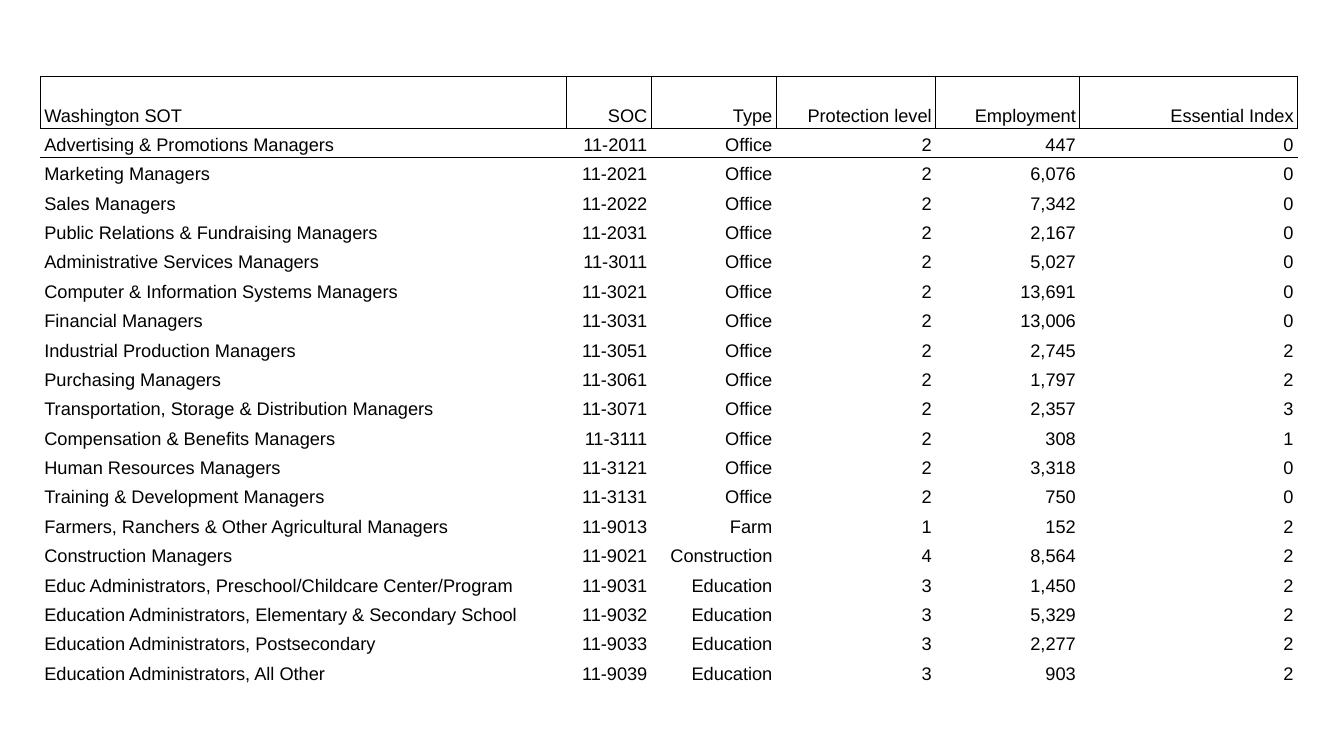
from lxml.etree import SubElement
from pptx import Presentation
from pptx.dml.color import RGBColor
from pptx.enum.text import MSO_ANCHOR, PP_ALIGN
from pptx.oxml.ns import qn
from pptx.util import Inches, Pt

BLACK = RGBColor(0x00, 0x00, 0x00)
FONT = "Arial"
NO_STYLE = "{2D5ABB26-0587-4C30-8999-92F81FD0307C}"

# Table grid, in inches
LEFT, TOP, BODY_HEIGHT = 0.4, 0.76, 5.54
HEADER_HEIGHT = 0.51
COLUMN_WIDTHS = [5.22, 0.84, 1.24, 1.58, 1.43, 2.16]

HEADER = ("Washington SOT", "SOC", "Type", "Protection level", "Employment",
          "Essential Index")
OCCUPATIONS = [
    ("Advertising & Promotions Managers", "11-2011", "Office", "2", "447", "0"),
    ("Marketing Managers", "11-2021", "Office", "2", "6,076", "0"),
    ("Sales Managers", "11-2022", "Office", "2", "7,342", "0"),
    ("Public Relations & Fundraising Managers", "11-2031", "Office", "2", "2,167", "0"),
    ("Administrative Services Managers", "11-3011", "Office", "2", "5,027", "0"),
    ("Computer & Information Systems Managers", "11-3021", "Office", "2", "13,691", "0"),
    ("Financial Managers", "11-3031", "Office", "2", "13,006", "0"),
    ("Industrial Production Managers", "11-3051", "Office", "2", "2,745", "2"),
    ("Purchasing Managers", "11-3061", "Office", "2", "1,797", "2"),
    ("Transportation, Storage & Distribution Managers", "11-3071", "Office", "2", "2,357", "3"),
    ("Compensation & Benefits Managers", "11-3111", "Office", "2", "308", "1"),
    ("Human Resources Managers", "11-3121", "Office", "2", "3,318", "0"),
    ("Training & Development Managers", "11-3131", "Office", "2", "750", "0"),
    ("Farmers, Ranchers & Other Agricultural Managers", "11-9013", "Farm", "1", "152", "2"),
    ("Construction Managers", "11-9021", "Construction", "4", "8,564", "2"),
    ("Educ Administrators, Preschool/Childcare Center/Program", "11-9031", "Education", "3",
     "1,450", "2"),
    ("Education Administrators, Elementary & Secondary School", "11-9032", "Education", "3",
     "5,329", "2"),
    ("Education Administrators, Postsecondary", "11-9033", "Education", "3", "2,277", "2"),
    ("Education Administrators, All Other", "11-9039", "Education", "3", "903", "2"),
]


def set_borders(cell, ruled_sides):
    """Rule the given sides (a string of L, R, T, B) and clear the others."""
    properties = cell._tc.get_or_add_tcPr()
    for side in "LRTB":
        line = SubElement(properties, qn(f"a:ln{side}"), w=str(Pt(0.75)))
        if side in ruled_sides:
            fill = SubElement(line, qn("a:solidFill"))
            SubElement(fill, qn("a:srgbClr"), val=str(BLACK))
        else:
            SubElement(line, qn("a:noFill"))


def ruled_sides_of(row):
    """Box the header, rule the first body row above and below."""
    return {0: "LRTB", 1: "TB", 2: "T"}.get(row, "")


def fill_cell(cell, text, alignment, ruled_sides):
    set_borders(cell, ruled_sides)
    cell.fill.background()
    cell.vertical_anchor = MSO_ANCHOR.BOTTOM
    cell.margin_left = cell.margin_right = Inches(0.04)
    cell.margin_top, cell.margin_bottom = Inches(0.03), Inches(0.02)
    para = cell.text_frame.paragraphs[0]
    para.text = text
    para.alignment = alignment
    para.line_spacing = 1.15
    para.font.name = FONT
    para.font.size = Pt(13)
    para.font.color.rgb = BLACK


def add_occupation_table(page):
    records = [HEADER, *OCCUPATIONS]
    frame = page.shapes.add_table(
        len(records), len(HEADER), Inches(LEFT), Inches(TOP),
        Inches(sum(COLUMN_WIDTHS)), Inches(HEADER_HEIGHT + BODY_HEIGHT))
    table = frame.table
    table.first_row = table.horz_banding = False
    table._tbl.tblPr.find(qn("a:tableStyleId")).text = NO_STYLE

    # Column widths and row heights
    for column, width in zip(table.columns, COLUMN_WIDTHS):
        column.width = Inches(width)
    for row in table.rows:
        row.height = Inches(BODY_HEIGHT / len(OCCUPATIONS))
    table.rows[0].height = Inches(HEADER_HEIGHT)

    # Cells: names to the left, everything else to the right
    for row, record in enumerate(records):
        for column, text in enumerate(record):
            alignment = PP_ALIGN.RIGHT if column else PP_ALIGN.LEFT
            fill_cell(table.cell(row, column), text, alignment, ruled_sides_of(row))


def main():
    deck = Presentation()
    deck.slide_width, deck.slide_height = Inches(13.33), Inches(7.5)
    page = deck.slides.add_slide(deck.slide_layouts[6])
    add_occupation_table(page)
    deck.save("out.pptx")


if __name__ == "__main__":
    main()
